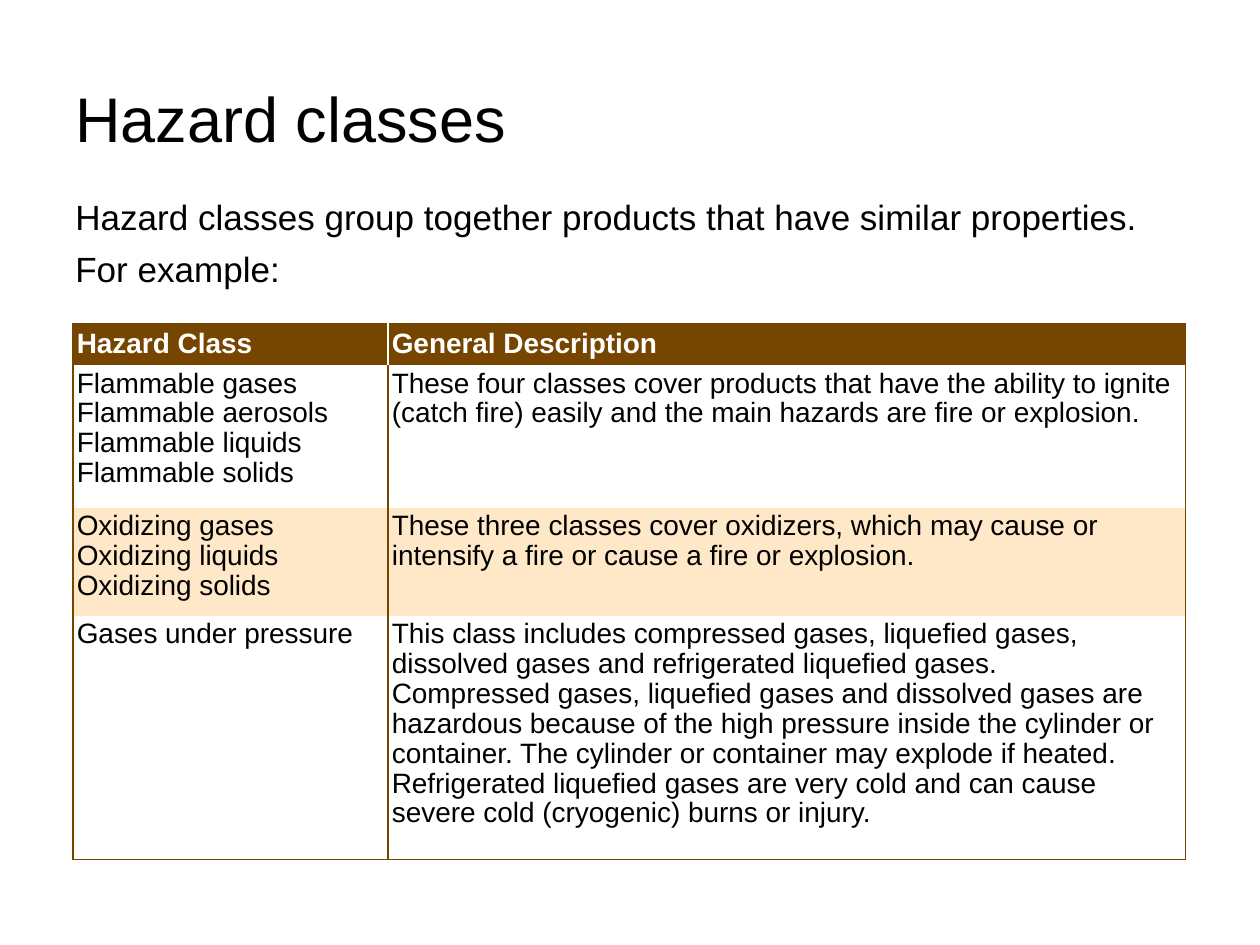
import pptx
import pptx.util
import pptx.dml.color
import pptx.enum.text
import pptx.oxml.ns
import lxml.etree

Inches = pptx.util.Inches
Pt = pptx.util.Pt
RGBColor = pptx.dml.color.RGBColor
qn = pptx.oxml.ns.qn
BLACK = RGBColor(0x00, 0x00, 0x00)
WHITE = RGBColor(0xFF, 0xFF, 0xFF)
BROWN = RGBColor(0x76, 0x46, 0x00)
CREAM = RGBColor(0xFF, 0xE8, 0xC8)


def write(frame, text, size, color=BLACK, bold=False):
    frame.word_wrap = True
    frame.text = text
    form = {"name": "Arial", "size": Pt(size), "bold": bold}
    for par in frame.paragraphs:
        for run in par.runs:
            for key, value in form.items():
                setattr(run.font, key, value)
            run.font.color.rgb = color
        for br in par._p.findall(qn("a:br")):
            lxml.etree.SubElement(br, qn("a:rPr"), sz=str(size * 100))


def edge(cell, side, color):
    line = lxml.etree.SubElement(cell._tc.get_or_add_tcPr(), qn("a:ln" + side), w=str(Pt(1)))
    if color is None:
        lxml.etree.SubElement(line, qn("a:noFill"))
    else:
        fill = lxml.etree.SubElement(line, qn("a:solidFill"))
        lxml.etree.SubElement(fill, qn("a:srgbClr"), val=str(color))


deck = pptx.Presentation()
deck.slide_width = Inches(10)
deck.slide_height = Inches(7.5)
slide = deck.slides.add_slide(deck.slide_layouts[6])

title = slide.shapes.add_textbox(Inches(0.5), Inches(0.58), Inches(9.07), Inches(1.12))
write(title.text_frame, "Hazard classes", 36)

intro = slide.shapes.add_textbox(Inches(0.5), Inches(1.5), Inches(8.83), Inches(0.86))
write(
    intro.text_frame,
    "Hazard classes group together products that have similar properties.\nFor example:",
    20,
)
for par in intro.text_frame.paragraphs:
    par.space_after = Pt(6)

rows = [
    ("Hazard Class", "General Description"),
    (
        "Flammable gases\vFlammable aerosols\vFlammable liquids\vFlammable solids",
        "These four classes cover products that have the ability to ignite "
        "(catch fire) easily and the main hazards are fire or explosion.",
    ),
    (
        "Oxidizing gases\vOxidizing liquids\vOxidizing solids",
        "These three classes cover oxidizers, which may cause or intensify "
        "a fire or cause a fire or explosion.",
    ),
    (
        "Gases under pressure",
        "This class includes compressed gases, liquefied gases, dissolved gases "
        "and refrigerated liquefied gases.\vCompressed gases, liquefied gases and "
        "dissolved gases are hazardous because of the high pressure inside the "
        "cylinder or container. The cylinder or container may explode if heated. "
        "Refrigerated liquefied gases are very cold and can cause severe cold "
        "(cryogenic) burns or injury.",
    ),
]
widths = [2.5, 6.33]
heights = [0.33, 1.13, 0.86, 1.93]
fills = [BROWN, None, CREAM, None]
last = len(rows) - 1

holder = slide.shapes.add_table(
    len(rows), 2, Inches(0.58), Inches(2.57), Inches(sum(widths)), Inches(sum(heights))
)
table = holder.table
table.first_row = True
table.horz_banding = False
table._tbl.tblPr.find(qn("a:tableStyleId")).text = "{2D5ABB26-0587-4C30-8999-92F81FD0307C}"
for col, width in zip(table.columns, widths):
    col.width = Inches(width)

for r, texts in enumerate(rows):
    table.rows[r].height = Inches(heights[r])
    head = r == 0
    inner = WHITE if head else BROWN
    for c, text in enumerate(texts):
        cell = table.cell(r, c)
        for side in ("left", "right", "top", "bottom"):
            setattr(cell, "margin_" + side, Inches(0.03))
        anchor = pptx.enum.text.MSO_ANCHOR
        cell.vertical_anchor = anchor.MIDDLE if head else anchor.TOP
        write(cell.text_frame, text, 16, WHITE if head else BLACK, head)
        cell.text_frame.paragraphs[0].line_spacing = 0.96
        edge(cell, "L", inner if c else BROWN)
        edge(cell, "R", BROWN if c else inner)
        edge(cell, "T", BROWN if head else None)
        edge(cell, "B", BROWN if r == last else None)
        if fills[r] is None:
            cell.fill.background()
        else:
            cell.fill.solid()
            cell.fill.fore_color.rgb = fills[r]

deck.save("out.pptx")
